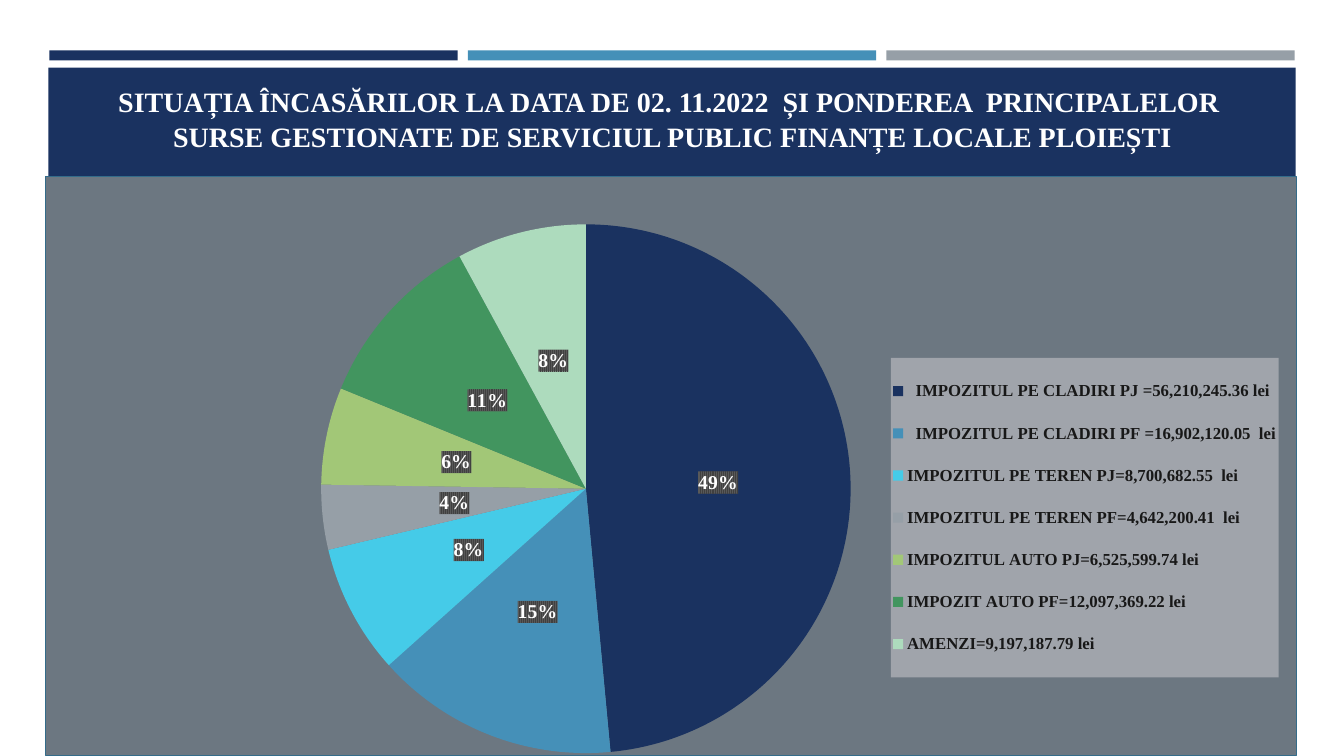
from lxml import etree
from pptx import Presentation
from pptx.chart.data import CategoryChartData
from pptx.dml.color import RGBColor
from pptx.enum.chart import XL_CHART_TYPE, XL_LABEL_POSITION, XL_LEGEND_POSITION
from pptx.enum.shapes import MSO_SHAPE
from pptx.enum.text import MSO_ANCHOR, PP_ALIGN
from pptx.oxml import parse_xml
from pptx.oxml.ns import nsdecls, qn
from pptx.util import Inches, Pt

PIE = XL_CHART_TYPE.PIE
RIGHT = XL_LEGEND_POSITION.RIGHT
MIDDLE = XL_LABEL_POSITION.CENTER
RECT = MSO_SHAPE.RECTANGLE
TOP = MSO_ANCHOR.TOP
CENTER = PP_ALIGN.CENTER

TITLE = ("SITUAȚIA ÎNCASĂRILOR LA DATA DE 02. 11.2022  ȘI PONDEREA  PRINCIPALELOR  "
         "SURSE GESTIONATE DE SERVICIUL PUBLIC FINANȚE LOCALE PLOIEȘTI")
SOURCES = [  # legend entry, share in percent, slice colour
    ("  IMPOZITUL PE CLADIRI PJ =56,210,245.36 lei", 49, "1A3260"),
    ("  IMPOZITUL PE CLADIRI PF =16,902,120.05  lei", 15, "4590B8"),
    ("IMPOZITUL PE TEREN PJ=8,700,682.55  lei", 8, "45CBE8"),
    ("IMPOZITUL PE TEREN PF=4,642,200.41  lei", 4, "969FA7"),
    ("IMPOZITUL AUTO PJ=6,525,599.74 lei", 6, "A2C777"),
    ("IMPOZIT AUTO PF=12,097,369.22 lei", 11, "42955F"),
    ("AMENZI=9,197,187.79 lei", 8, "ADDBBD"),
]


class Theme:
    serif, sans = "Times New Roman", "Calibri"
    navy, blue, grey = "1A3260", "4590B8", "969FA7"
    white, black, ink = "FFFFFF", "000000", "181818"
    panel, edge, key = "6C7781", "346C8A", "A0A4AB"
    dark, stripe = "404040", "595959"
    title, label, legend, base = 20, 14, 12, 10


WIDE, HIGH = 13.33, 7.5
LEFT, BAR, GAP = 0.49, 4.05, 0.1
BAND = (0.48, 0.67, 12.37, 1.3)
HEAD = (0.64, 0.77, 12.06, 1.11)
CHART = (0.45, 1.75, 12.41, 5.75)
PLOT = (0.062, 0.082, 0.74, 0.914)  # shares of the chart
KEY = (0.676, 0.313, 0.31, 0.552)


def rgb(code):
    return RGBColor.from_string(code)


def style(font, size, color, face=Theme.serif, bold=True):
    font.size, font.name, font.bold = Pt(size), face, bold
    font.color.rgb = rgb(color)


def block(slide, box, color):
    shape = slide.shapes.add_shape(RECT, *map(Inches, box))
    shape.shadow.inherit = False
    shape.fill.solid()
    shape.fill.fore_color.rgb = rgb(color)
    shape.line.fill.background()


def solid(color):
    return f'<a:solidFill><a:srgbClr val="{color}"/></a:solidFill>'


def paint(body):
    """Chart part formatting that holds the given fill and line."""
    return parse_xml(f'<c:spPr {nsdecls("c", "a")}>{body}</c:spPr>')


def layout(box, inner=False):
    """Manual chart layout from left, top, width and height shares."""
    target = '<c:layoutTarget val="inner"/>' if inner else ""
    modes = '<c:xMode val="edge"/><c:yMode val="edge"/>'
    sizes = "".join(f'<c:{n} val="{v}"/>' for n, v in zip("xywh", box))
    return parse_xml(f'<c:layout {nsdecls("c")}><c:manualLayout>{target}{modes}{sizes}'
                     '</c:manualLayout></c:layout>')


def place(parent, node, before):
    """Put node before a named child, in place of any node of its kind."""
    for old in parent.findall(node.tag):
        parent.remove(old)
    parent.find(qn(before)).addprevious(node)


def add_title(slide):
    title = slide.shapes.title
    title.left, title.top, title.width, title.height = map(Inches, HEAD)
    frame = title.text_frame
    frame.word_wrap, frame.vertical_anchor = True, TOP
    para = frame.paragraphs[0]
    para.alignment = CENTER
    para.line_spacing = 1.05
    run = para.add_run()
    run.text = TITLE
    style(run.font, Theme.title, Theme.white)


def add_pie(slide):
    data = CategoryChartData(number_format="0")
    data.categories = [name for name, _, _ in SOURCES]
    data.add_series("Series 1", [share for _, share, _ in SOURCES])
    chart = slide.shapes.add_chart(PIE, *map(Inches, CHART), data).chart
    chart.has_title = False
    style(chart.font, Theme.base, Theme.black, Theme.sans, False)

    plot = chart.plots[0]
    plot.vary_by_categories = True
    for spot, (_, _, color) in enumerate(SOURCES):
        point = plot.series[0].points[spot].format
        point.fill.solid()
        point.fill.fore_color.rgb = rgb(color)
        point.line.fill.background()

    labels = plot.series[0].data_labels
    labels.show_percentage, labels.show_value = True, False
    labels.number_format, labels.number_format_is_linked = "0%", False
    labels.position = MIDDLE
    style(labels.font, Theme.label, Theme.white)
    node = labels.font._element.getparent()
    while node.tag != qn("c:dLbls"):
        node = node.getparent()
    tones = "".join(f'<a:{tag}><a:srgbClr val="{tone}"/></a:{tag}>'
                    for tag, tone in (("fgClr", Theme.dark), ("bgClr", Theme.stripe)))
    place(node, paint(f'<a:pattFill prst="narVert">{tones}</a:pattFill>'), "c:txPr")

    chart.has_legend = True
    legend = chart.legend
    legend.position, legend.include_in_layout = RIGHT, True
    style(legend.font, Theme.legend, Theme.ink)
    root = chart.element
    box = next(root.iter(qn("c:legend")))
    place(box, layout(KEY), "c:overlay")
    place(box, paint(solid(Theme.key)), "c:txPr")
    place(next(root.iter(qn("c:plotArea"))), layout(PLOT, True), "c:pieChart")
    line = f'<a:ln w="{Pt(0.75)}">{solid(Theme.edge)}</a:ln>'
    place(root, paint(solid(Theme.panel) + line), "c:txPr")
    if root.find(qn("c:roundedCorners")) is None:
        corners = etree.Element(qn("c:roundedCorners"), val="0")
        place(root, corners, "c:chart")


def main():
    deck = Presentation()
    deck.slide_width, deck.slide_height = Inches(WIDE), Inches(HIGH)
    slide = deck.slides.add_slide(deck.slide_layouts[5])
    for spot, color in enumerate((Theme.navy, Theme.blue, Theme.grey)):
        block(slide, (LEFT + spot * (BAR + GAP), 0.5, BAR, 0.1), color)
    block(slide, BAND, Theme.navy)
    add_title(slide)
    title = slide.shapes.title._element
    title.getparent().append(title)
    add_pie(slide)
    deck.save("out.pptx")


if __name__ == "__main__":
    main()
